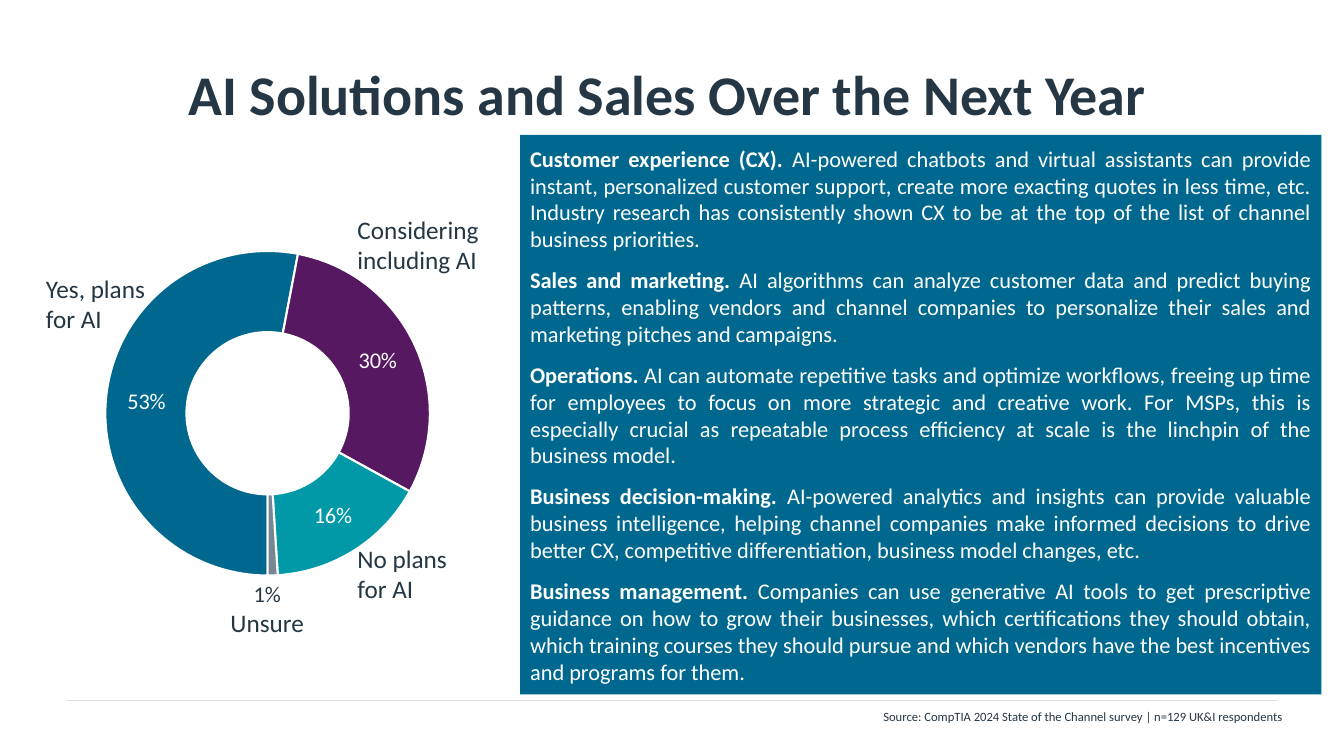
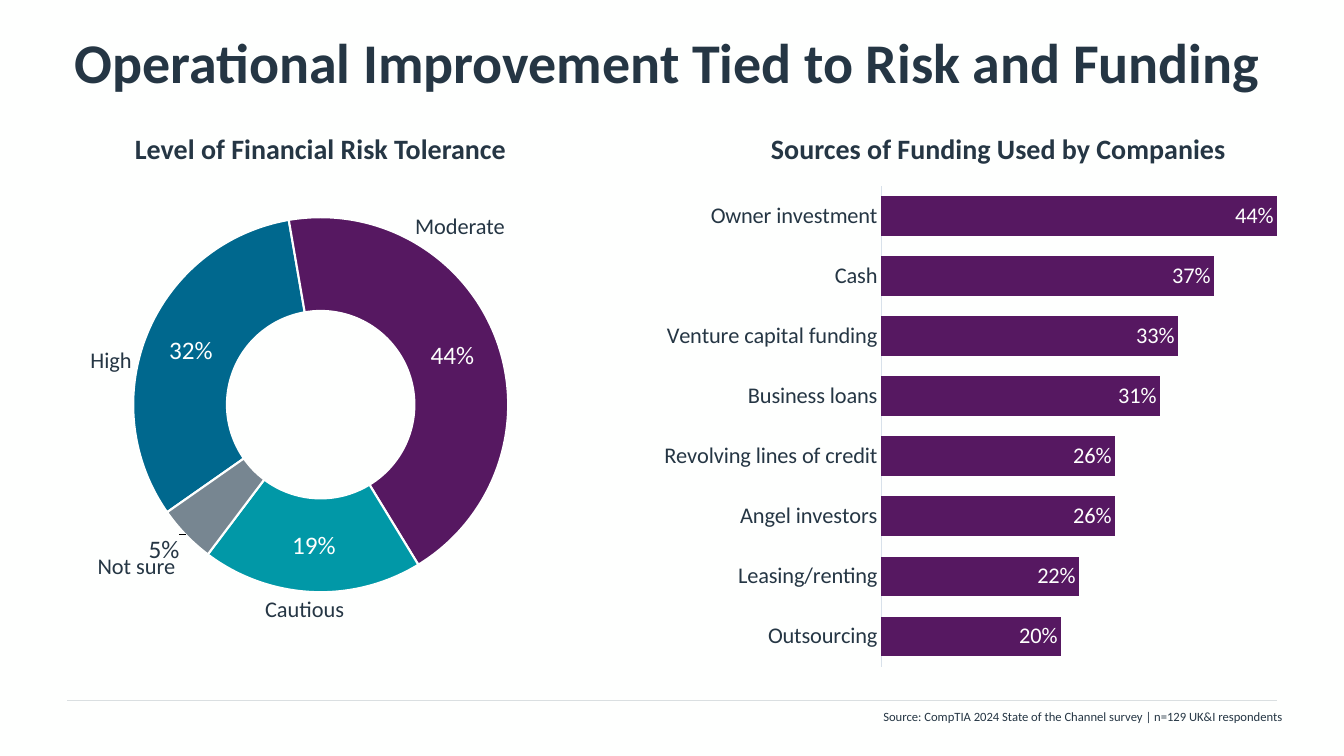
from pptx import Presentation
from pptx.chart.data import CategoryChartData
from pptx.dml.color import RGBColor
from pptx.enum.chart import XL_CHART_TYPE as ChartType, XL_LABEL_POSITION as LabelPosition, XL_TICK_MARK as TickMark
from pptx.enum.shapes import MSO_CONNECTOR as Connector, MSO_SHAPE as Shape
from pptx.enum.text import MSO_ANCHOR as Anchor, MSO_AUTO_SIZE as AutoSize, PP_ALIGN as Align
from pptx.oxml import parse_xml
from pptx.oxml.ns import nsdecls
from pptx.util import Cm, Pt

FONT = "Calibri"
WHITE = RGBColor(0xFE, 0xFF, 0xFE)
INK = RGBColor(0x25, 0x36, 0x44)
BLUE = RGBColor(0x00, 0x68, 0x8E)
PURPLE = RGBColor(0x56, 0x18, 0x61)
TEAL = RGBColor(0x01, 0x98, 0xA7)
GRAY = RGBColor(0x77, 0x86, 0x91)
RULE = RGBColor(0xDA, 0xDF, 0xE1)
AXIS = RGBColor(0xD8, 0xE1, 0xEA)
RING_COLORS = [BLUE, PURPLE, TEAL, GRAY]
SOURCE = "Source: CompTIA 2024 State of the Channel survey | n=129 UK&I respondents"

USES = [
    ("Customer experience (CX).",
     " AI-powered chatbots and virtual assistants can provide instant, personalized customer support, "
     "create more exacting quotes in less time, etc. Industry research has consistently shown CX to be "
     "at the top of the list of channel business priorities."),
    ("Sales and marketing.",
     " AI algorithms can analyze customer data and predict buying patterns, enabling vendors and channel "
     "companies to personalize their sales and marketing pitches and campaigns."),
    ("Operations.",
     " AI can automate repetitive tasks and optimize workflows, freeing up time for employees to focus on "
     "more strategic and creative work. For MSPs, this is especially crucial as repeatable process "
     "efficiency at scale is the linchpin of the business model."),
    ("Business decision-making.",
     " AI-powered analytics and insights can provide valuable business intelligence, helping channel "
     "companies make informed decisions to drive better CX, competitive differentiation, business model "
     "changes, etc."),
    ("Business management.",
     " Companies can use generative AI tools to get prescriptive guidance on how to grow their businesses, "
     "which certifications they should obtain, which training courses they should pursue and which vendors "
     "have the best incentives and programs for them."),
]
FUNDING = {
    "Outsourcing": 0.20,
    "Leasing/renting": 0.22,
    "Angel investors": 0.26,
    "Revolving lines of credit": 0.26,
    "Business loans": 0.31,
    "Venture capital funding": 0.33,
    "Cash": 0.37,
    "Owner investment": 0.44,
}


def set_font(font, size, color=INK, bold=False):
    font.name = FONT
    font.size = Pt(size)
    font.bold = bold
    font.color.rgb = color


def fill_solid(format_owner, color):
    format_owner.fill.solid()
    format_owner.fill.fore_color.rgb = color


class Deck:
    def __init__(self):
        self.presentation = Presentation()
        self.presentation.slide_width = Cm(33.87)
        self.presentation.slide_height = Cm(19.05)
        fill_solid(self.presentation.slide_master.background, WHITE)
        self.slide = None

    def add_slide(self, title, title_top):
        self.slide = self.presentation.slides.add_slide(self.presentation.slide_layouts[5])
        shape = self.slide.shapes.title
        shape.left, shape.top = Cm(1.7), Cm(title_top)
        shape.width, shape.height = Cm(30.48), Cm(3.18)
        frame = shape.text_frame
        frame.text = title
        frame.auto_size = AutoSize.NONE
        frame.vertical_anchor = Anchor.MIDDLE
        frame.margin_left = 0
        paragraph = frame.paragraphs[0]
        paragraph.alignment = Align.CENTER
        set_font(paragraph.runs[0].font, 40, bold=True)
        self.add_rule()
        self.add_text(SOURCE, 16.08, 17.73, 16.48, 0.64, [9], align=Align.RIGHT)

    def add_rule(self):
        line = self.slide.shapes.add_connector(Connector.STRAIGHT, Cm(1.7), Cm(17.65), Cm(32.18), Cm(17.65))
        line.line.color.rgb = RULE
        line.line.width = Pt(0.5)
        line.element.spPr.append(parse_xml(f"<a:effectLst {nsdecls('a')}/>"))

    def add_text(self, text, left, top, width, height, sizes, bold=False, align=Align.LEFT, wrap=True):
        box = self.slide.shapes.add_textbox(Cm(left), Cm(top), Cm(width), Cm(height))
        frame = box.text_frame
        frame.text = text
        frame.word_wrap = wrap
        for paragraph, size in zip(frame.paragraphs, sizes):
            paragraph.alignment = align
            set_font(paragraph.runs[0].font, size, bold=bold)

    def add_panel(self, entries, left, top, width, height):
        panel = self.slide.shapes.add_shape(Shape.RECTANGLE, Cm(left), Cm(top), Cm(width), Cm(height))
        panel.shadow.inherit = False
        fill_solid(panel, BLUE)
        panel.line.fill.background()
        frame = panel.text_frame
        frame.word_wrap = True
        frame.vertical_anchor = Anchor.MIDDLE
        for index, entry in enumerate(entries):
            paragraph = frame.add_paragraph() if index else frame.paragraphs[0]
            paragraph.alignment = Align.JUSTIFY
            paragraph.space_after = Pt(10)
            for text, bold in zip(entry, (True, False)):
                run = paragraph.add_run()
                run.text = text
                set_font(run.font, 16, WHITE, bold)

    def add_chart(self, kind, categories, values, place, plot_area, label_size):
        data = CategoryChartData(number_format="0%")
        data.categories = categories
        data.add_series("Series 1", values)
        chart = self.slide.shapes.add_chart(kind, *map(Cm, place), data).chart
        chart.has_legend = False
        chart.has_title = False
        set_font(chart.font, 11)
        area = chart.element.xpath("c:chart/c:plotArea")[0]
        for layout in area.xpath("c:layout"):
            area.remove(layout)
        sizes = "".join(f'<c:{name} val="{value}"/>' for name, value in zip("xywh", plot_area))
        area.insert(0, parse_xml(
            f'<c:layout {nsdecls("c")}><c:manualLayout><c:layoutTarget val="inner"/>'
            f'<c:xMode val="edge"/><c:yMode val="edge"/>{sizes}</c:manualLayout></c:layout>'))
        plot = chart.plots[0]
        plot.vary_by_categories = False
        labels = plot.series[0].data_labels
        labels.show_value = True
        labels.number_format = "0%"
        labels.number_format_is_linked = False
        set_font(labels.font, label_size, WHITE)
        return chart

    def add_ring(self, values, place, plot_area, start, label_size):
        chart = self.add_chart(ChartType.DOUGHNUT, ["1", "2", "3", "4"], values, place, plot_area, label_size)
        chart.element.xpath(".//c:firstSliceAng")[0].set("val", str(start))
        chart.element.xpath(".//c:holeSize")[0].set("val", "50")
        series = chart.plots[0].series[0]
        for index, color in enumerate(RING_COLORS):
            point = series.points[index].format
            fill_solid(point, color)
            point.line.color.rgb = WHITE
            point.line.width = Pt(1.5)
        set_font(series.points[3].data_label.font, label_size)
        return chart.element.xpath(".//c:ser/c:dLbls/c:dLbl")[0]

    def hide_label(self, label):
        for child in list(label)[1:]:
            label.remove(child)
        label.append(parse_xml(f'<c:delete {nsdecls("c")} val="1"/>'))

    def shift_label(self, label, across, down):
        label.insert(1, parse_xml(
            f'<c:layout {nsdecls("c")}><c:manualLayout><c:x val="{across}"/><c:y val="{down}"/>'
            f'</c:manualLayout></c:layout>'))
        label.insert(2, parse_xml(f'<c:numFmt {nsdecls("c")} formatCode="0%" sourceLinked="0"/>'))

    def add_bars(self, entries, place, plot_area):
        chart = self.add_chart(ChartType.BAR_CLUSTERED, entries.keys(), entries.values(), place, plot_area, 16)
        plot = chart.plots[0]
        plot.gap_width = 51
        fill_solid(plot.series[0].format, PURPLE)
        plot.series[0].data_labels.position = LabelPosition.INSIDE_END
        values = chart.value_axis
        values.minimum_scale, values.maximum_scale = 0, max(entries.values())
        values.has_major_gridlines = False
        values.visible = False
        names = chart.category_axis
        names.major_tick_mark = TickMark.NONE
        names.format.line.color.rgb = AXIS
        names.format.line.width = Pt(0.75)
        set_font(names.tick_labels.font, 16)


def build_solutions(deck):
    deck.add_slide("AI Solutions and Sales Over the Next Year", 0.76)
    unsure = deck.add_ring([0.53, 0.30, 0.16, 0.01], (2.06, 5.97, 9.37, 8.89), (0.05, 0.04, 0.9, 0.92), 180, 16)
    deck.hide_label(unsure)
    for text, left, top, width in [
        ("Yes, plans for AI", 0.91, 6.76, 3.12),
        ("Considering including AI", 8.76, 5.28, 4.29),
        ("No plans for AI", 8.76, 13.56, 3.1),
    ]:
        deck.add_text(text, left, top, width, 1.8, [18])
    deck.add_text("1%\nUnsure", 5.54, 14.5, 2.39, 1.7, [16, 18], align=Align.CENTER, wrap=False)
    deck.add_panel(USES, 13.11, 3.4, 20.19, 14.1)


def build_funding(deck):
    deck.add_slide("Operational Improvement Tied to Risk and Funding", -0.05)
    not_sure = deck.add_ring([0.32, 0.44, 0.19, 0.05], (2.82, 5.03, 10.74, 10.77), (0.05, 0.04, 0.88, 0.88), 235, 18)
    deck.shift_label(not_sure, -0.13, 0.11)
    for text, left, top, width in [
        ("High", 2.03, 8.59, 1.57),
        ("Moderate", 10.21, 5.21, 2.82),
        ("Cautious", 6.43, 14.86, 2.54),
        ("Not sure", 2.21, 13.79, 2.51),
    ]:
        deck.add_text(text, left, top, width, 0.94, [16], wrap=False)
    deck.add_bars(FUNDING, (14.05, 4.67, 18.14, 12.14), (0.45, 0, 0.55, 1))
    deck.add_text("Sources of Funding Used by Companies", 19.18, 3.2, 12.07, 1.12, [20], bold=True, wrap=False)
    deck.add_text("Level of Financial Risk Tolerance", 3.15, 3.18, 9.96, 1.12, [20], bold=True, wrap=False)


def main():
    deck = Deck()
    build_solutions(deck)
    build_funding(deck)
    deck.presentation.save("out.pptx")


if __name__ == "__main__":
    main()
